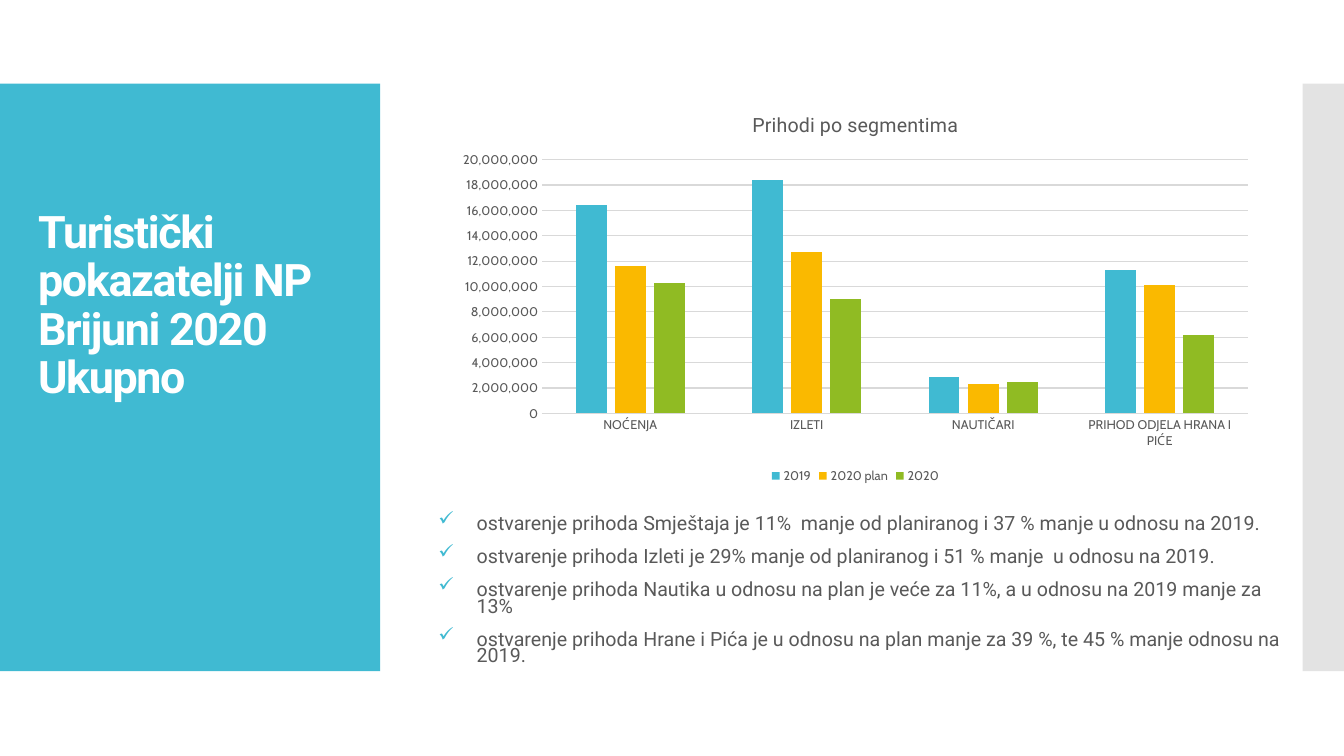
from lxml import etree
from pptx import Presentation
from pptx.chart.data import CategoryChartData
from pptx.dml.color import RGBColor
from pptx.enum.chart import XL_CHART_TYPE as ChartType, XL_LEGEND_POSITION as LegendPosition
from pptx.enum.chart import XL_TICK_MARK as TickMark
from pptx.enum.shapes import MSO_SHAPE as Shape
from pptx.enum.text import MSO_ANCHOR as Anchor
from pptx.oxml.ns import qn
from pptx.util import Inches, Pt

TEAL = RGBColor(0x40, 0xBA, 0xD2)
AMBER = RGBColor(0xFA, 0xB9, 0x00)
GREEN = RGBColor(0x90, 0xBB, 0x23)
SILVER = RGBColor(0xC8, 0xC8, 0xC8)
GRID = RGBColor(0xD9, 0xD9, 0xD9)
TEXT = RGBColor(0x59, 0x59, 0x59)
WHITE = RGBColor(0xFF, 0xFF, 0xFF)


def style_font(font, name, size, color, bold=False):
    font.name = name
    font.size = Pt(size)
    font.bold = bold
    font.color.rgb = color


def add_check_bullet(para):
    props = para._p.get_or_add_pPr()
    props.set("marL", str(Inches(0.38)))
    props.set("indent", str(Inches(-0.38)))
    color = etree.SubElement(props, qn("a:buClr"))
    etree.SubElement(color, qn("a:srgbClr"), val=str(TEAL))
    etree.SubElement(props, qn("a:buChar"), char="✓")


deck = Presentation()
deck.slide_width = Inches(13.33)
deck.slide_height = Inches(7.5)
page = deck.slides.add_slide(deck.slide_layouts[6])

for left, width, color in [(0, 3.77, TEAL), (12.92, 0.41, SILVER)]:
    panel = page.shapes.add_shape(
        Shape.RECTANGLE, Inches(left), Inches(0.83), Inches(width), Inches(5.83))
    panel.shadow.inherit = False
    panel.fill.solid()
    panel.fill.fore_color.rgb = color
    panel.line.fill.background()
side_color = panel.fill._xPr.find(qn("a:solidFill")).find(qn("a:srgbClr"))
etree.SubElement(side_color, qn("a:alpha"), val="50000")

title_box = page.shapes.add_textbox(Inches(0.28), Inches(1.23), Inches(3.22), Inches(2.82))
title_frame = title_box.text_frame
title_frame.word_wrap = True
title_frame.vertical_anchor = Anchor.BOTTOM
title_frame.text = "Turistički pokazatelji NP Brijuni 2020\nUkupno"
for para in title_frame.paragraphs:
    para.line_spacing = 0.9
    for span in para.runs:
        style_font(span.font, "Roboto", 32, WHITE, True)
        span.font._element.set("spc", "-100")

findings = [
    "ostvarenje prihoda Smještaja je 11%  manje od planiranog i 37 % manje u odnosu na 2019.",
    "ostvarenje prihoda Izleti je 29% manje od planiranog i 51 % manje  u odnosu na 2019.",
    "ostvarenje prihoda Nautika u odnosu na plan je veće za 11%, a u odnosu na 2019 manje za 13%",
    "ostvarenje prihoda Hrane i Pića je u odnosu na plan manje za 39 %, te 45 % manje odnosu na 2019.",
]
findings_box = page.shapes.add_textbox(Inches(4.25), Inches(5.08), Inches(8.63), Inches(1.48))
findings_frame = findings_box.text_frame
findings_frame.word_wrap = True
findings_frame.text = "\n".join(findings)
for index, para in enumerate(findings_frame.paragraphs):
    add_check_bullet(para)
    para.line_spacing = 0.7
    if index:
        para.space_before = Pt(12)
    for span in para.runs:
        style_font(span.font, "Roboto", 14, TEXT)

revenue = CategoryChartData(number_format="#,##0")
revenue.categories = ["NOĆENJA", "IZLETI", "NAUTIČARI", "PRIHOD ODJELA HRANA I PIĆE"]
revenue.add_series("2019", [16400000, 18400000, 2900000, 11300000])
revenue.add_series("2020 plan", [11600000, 12700000, 2300000, 10100000])
revenue.add_series("2020", [10300000, 9000000, 2500000, 6200000])
chart = page.shapes.add_chart(
    ChartType.COLUMN_CLUSTERED, Inches(4.43), Inches(0.94), Inches(8.11), Inches(3.9),
    revenue).chart
style_font(chart.font, "Cabin", 10, TEXT)

chart.has_title = True
chart.chart_title.include_in_layout = False
chart.chart_title.text_frame.text = "Prihodi po segmentima"
style_font(chart.chart_title.text_frame.paragraphs[0].runs[0].font, "Roboto", 14, TEXT)

chart.has_legend = True
chart.legend.position = LegendPosition.BOTTOM
chart.legend.include_in_layout = False
style_font(chart.legend.font, "Cabin", 9, TEXT)

plot = chart.plots[0]
plot.gap_width = 219
plot.overlap = -27
plot.vary_by_categories = False
for series, color in zip(plot.series, [TEAL, AMBER, GREEN]):
    series.format.fill.solid()
    series.format.fill.fore_color.rgb = color

for axis in (chart.category_axis, chart.value_axis):
    axis.major_tick_mark = TickMark.NONE
    axis.minor_tick_mark = TickMark.NONE
    style_font(axis.tick_labels.font, "Cabin", 9, TEXT)
amounts = chart.value_axis
amounts.minimum_scale = 0
amounts.maximum_scale = 20000000
amounts.major_unit = 2000000
amounts.tick_labels.number_format = "#,##0"
amounts.tick_labels.number_format_is_linked = False
amounts.format.line.fill.background()
for line in (chart.category_axis.format.line, amounts.major_gridlines.format.line):
    line.color.rgb = GRID
    line.width = Pt(0.75)

deck.save("out.pptx")
